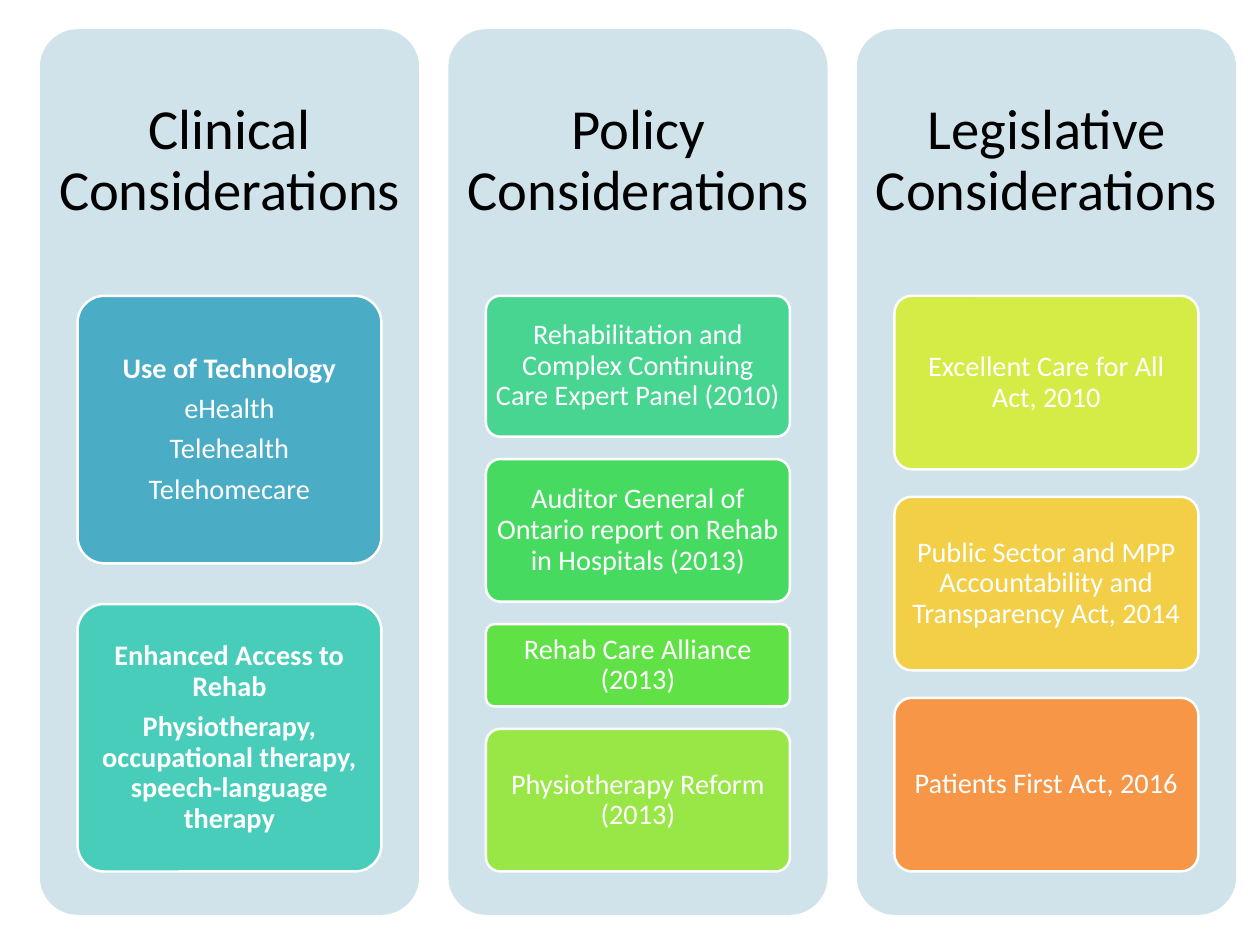
import pptx
import pptx.util
import pptx.dml.color
import pptx.enum.shapes
import pptx.enum.text

Inches = pptx.util.Inches
Pt = pptx.util.Pt
RGBColor = pptx.dml.color.RGBColor

WHITE = RGBColor(0xFF, 0xFF, 0xFF)
BLACK = RGBColor(0x00, 0x00, 0x00)
PALE_BLUE = RGBColor(0xD0, 0xE3, 0xEA)
BLUE = RGBColor(0x4B, 0xAC, 0xC6)
TEAL = RGBColor(0x49, 0xCD, 0xBB)
MINT = RGBColor(0x48, 0xD4, 0x91)
GREEN = RGBColor(0x47, 0xDA, 0x61)
BRIGHT_GREEN = RGBColor(0x60, 0xE1, 0x46)
LIME = RGBColor(0x98, 0xE7, 0x46)
YELLOW = RGBColor(0xD5, 0xEC, 0x46)
GOLD = RGBColor(0xF2, 0xCF, 0x46)
ORANGE = RGBColor(0xF7, 0x96, 0x46)

PANEL_LEFT, PANEL_TOP = 0.45, 0.33
PANEL_WIDTH, PANEL_HEIGHT = 4.28, 10
PANEL_GAP = 0.33
PANEL_PITCH = PANEL_WIDTH + PANEL_GAP
HEADING_HEIGHT = 3
CARD_TOP, CARD_BOTTOM = 3.34, 9.84
CARD_WIDTH = 3.43

COLUMNS = [
    ("Clinical Considerations", [
        (3.02, BLUE, [("Use of Technology", True), ("eHealth", False),
                      ("Telehealth", False), ("Telehomecare", False)]),
        (3.02, TEAL, [("Enhanced Access to Rehab", True),
                      ("Physiotherapy, occupational therapy, "
                       "speech-language therapy", True)]),
    ]),
    ("Policy Considerations", [
        (1.59, MINT, [("Rehabilitation and Complex Continuing "
                       "Care Expert Panel (2010)", False)]),
        (1.61, GREEN, [("Auditor General of Ontario report on Rehab "
                        "in Hospitals (2013)", False)]),
        (0.93, BRIGHT_GREEN, [("Rehab Care Alliance (2013)", False)]),
        (1.61, LIME, [("Physiotherapy Reform (2013)", False)]),
    ]),
    ("Legislative Considerations", [
        (1.96, YELLOW, [("Excellent Care for All Act, 2010", False)]),
        (1.96, GOLD, [("Public Sector and MPP Accountability and "
                       "Transparency Act, 2014", False)]),
        (1.96, ORANGE, [("Patients First Act, 2016", False)]),
    ]),
]


class SlideBuilder:
    font = "Calibri"
    heading_size = 46
    card_size = 23

    def __init__(self, slide):
        self.slide = slide

    def set_text(self, sp, lines, size, color, margin_x, margin_y):
        tf = sp.text_frame
        tf.word_wrap = True
        tf.vertical_anchor = pptx.enum.text.MSO_ANCHOR.MIDDLE
        tf.margin_left = tf.margin_right = Inches(margin_x)
        tf.margin_top = tf.margin_bottom = Inches(margin_y)
        for i, (text, bold) in enumerate(lines):
            p = tf.add_paragraph() if i else tf.paragraphs[0]
            p.text = text
            p.alignment = pptx.enum.text.PP_ALIGN.CENTER
            p.line_spacing = 0.9
            p.space_after = Pt(round(size * 0.35))
            p.font.name = self.font
            p.font.size = Pt(size)
            p.font.bold = bold
            p.font.color.rgb = color

    def rounded(self, left, top, width, height, fill):
        sp = self.slide.shapes.add_shape(
            pptx.enum.shapes.MSO_SHAPE.ROUNDED_RECTANGLE,
            Inches(left), Inches(top), Inches(width), Inches(height))
        sp.adjustments[0] = 0.1
        sp.shadow.inherit = False
        sp.fill.solid()
        sp.fill.fore_color.rgb = fill
        return sp

    def panel(self, left):
        sp = self.rounded(left, PANEL_TOP, PANEL_WIDTH, PANEL_HEIGHT, PALE_BLUE)
        sp.line.fill.background()

    def heading(self, left, text):
        sp = self.slide.shapes.add_textbox(
            Inches(left), Inches(PANEL_TOP),
            Inches(PANEL_WIDTH), Inches(HEADING_HEIGHT))
        self.set_text(sp, [(text, False)], self.heading_size, BLACK, 0.19, 0.19)

    def card(self, left, top, height, fill, lines):
        sp = self.rounded(left, top, CARD_WIDTH, height, fill)
        sp.line.color.rgb = WHITE
        sp.line.width = Pt(2)
        self.set_text(sp, lines, self.card_size, WHITE, 0.06, 0.05)

    def column(self, left, title, cards):
        self.panel(left)
        self.heading(left, title)
        used = sum(height for height, _, _ in cards)
        gap = (CARD_BOTTOM - CARD_TOP - used) / (len(cards) - 1)
        card_left = left + (PANEL_WIDTH - CARD_WIDTH) / 2
        top = CARD_TOP
        for height, fill, lines in cards:
            self.card(card_left, top, height, fill, lines)
            top += height + gap


def main():
    prs = pptx.Presentation()
    prs.slide_width = Inches(14.22)
    prs.slide_height = Inches(10.67)
    builder = SlideBuilder(prs.slides.add_slide(prs.slide_layouts[6]))
    for i, (title, cards) in enumerate(COLUMNS):
        builder.column(PANEL_LEFT + i * PANEL_PITCH, title, cards)
    prs.save("out.pptx")


if __name__ == "__main__":
    main()
